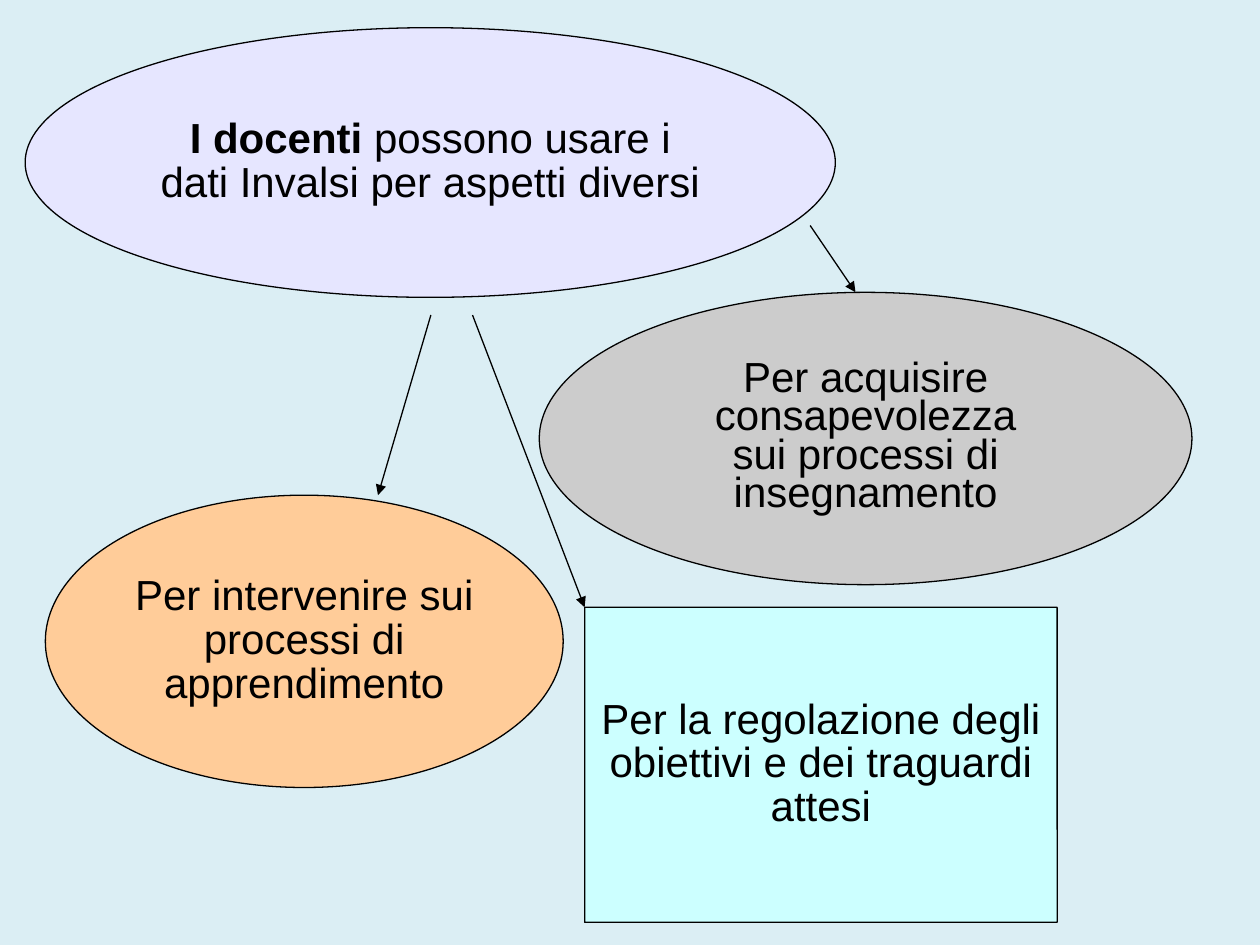
from lxml.etree import SubElement
from pptx import Presentation
from pptx.dml.color import RGBColor
from pptx.enum.shapes import MSO_CONNECTOR, MSO_SHAPE
from pptx.enum.text import MSO_ANCHOR, PP_ALIGN
from pptx.oxml.ns import qn
from pptx.util import Inches, Pt

COLORS = {
    "background": "DBEEF4",
    "ink": "000000",
    "teachers": "E6E6FF",
    "learning": "FFCC99",
    "goals": "CCFFFF",
    "teaching": "CCCCCC",
}


def color(name):
    return RGBColor.from_string(COLORS[name])


def write(box, paragraphs, size=24, font="Arial", spacing=0.87):
    frame = box.text_frame
    frame.word_wrap = True
    frame.vertical_anchor = MSO_ANCHOR.MIDDLE
    for index, runs in enumerate(paragraphs):
        para = frame.add_paragraph() if index else frame.paragraphs[0]
        para.alignment = PP_ALIGN.CENTER
        para.line_spacing = spacing
        for text, bold in runs:
            span = para.add_run()
            span.text = text
            span.font.name = font
            span.font.size = Pt(size)
            span.font.bold = bold
            span.font.color.rgb = color("ink")


deck = Presentation()
deck.slide_width = Inches(10)
deck.slide_height = Inches(7.5)
page = deck.slides.add_slide(deck.slide_layouts[6])
page.background.fill.solid()
page.background.fill.fore_color.rgb = color("background")

bubbles = [
    ("teachers", MSO_SHAPE.OVAL, (0.2, 0.22, 6.43, 2.14), 0.87,
     [[("I docenti ", True), ("possono usare i dati Invalsi per aspetti diversi", False)]]),
    ("learning", MSO_SHAPE.OVAL, (0.36, 3.93, 4.11, 2.32), 0.87,
     [[("Per intervenire sui processi di apprendimento", False)]]),
    ("goals", MSO_SHAPE.ROUNDED_RECTANGLE, (4.64, 4.82, 3.75, 2.5), 0.87,
     [[("Per la regolazione degli obiettivi e dei traguardi attesi", False)]]),
    ("teaching", MSO_SHAPE.OVAL, (4.28, 2.32, 5.18, 2.32), 0.76,
     [[("Per acquisire consapevolezza", False)], [("sui processi di insegnamento", False)]]),
]
for fill, kind, place, spacing, paragraphs in bubbles:
    box = page.shapes.add_shape(kind, *map(Inches, place))
    if kind == MSO_SHAPE.ROUNDED_RECTANGLE:
        box.adjustments[0] = 0.001
    box.shadow.inherit = False
    box.fill.solid()
    box.fill.fore_color.rgb = color(fill)
    box.line.color.rgb = color("ink")
    box.line.width = Pt(0.75)
    write(box, paragraphs, spacing=spacing)

arrows = [
    (3.42, 2.5, 3, 3.93),
    (6.43, 1.79, 6.79, 2.32),
    (3.75, 2.5, 4.64, 4.82),
]
for ends in arrows:
    arrow = page.shapes.add_connector(MSO_CONNECTOR.STRAIGHT, *map(Inches, ends))
    arrow.line.color.rgb = color("ink")
    arrow.line.width = Pt(0.75)
    SubElement(arrow.line._get_or_add_ln(), qn("a:tailEnd"), type="triangle")
    SubElement(arrow._element.spPr, qn("a:effectLst"))

deck.save("out.pptx")
